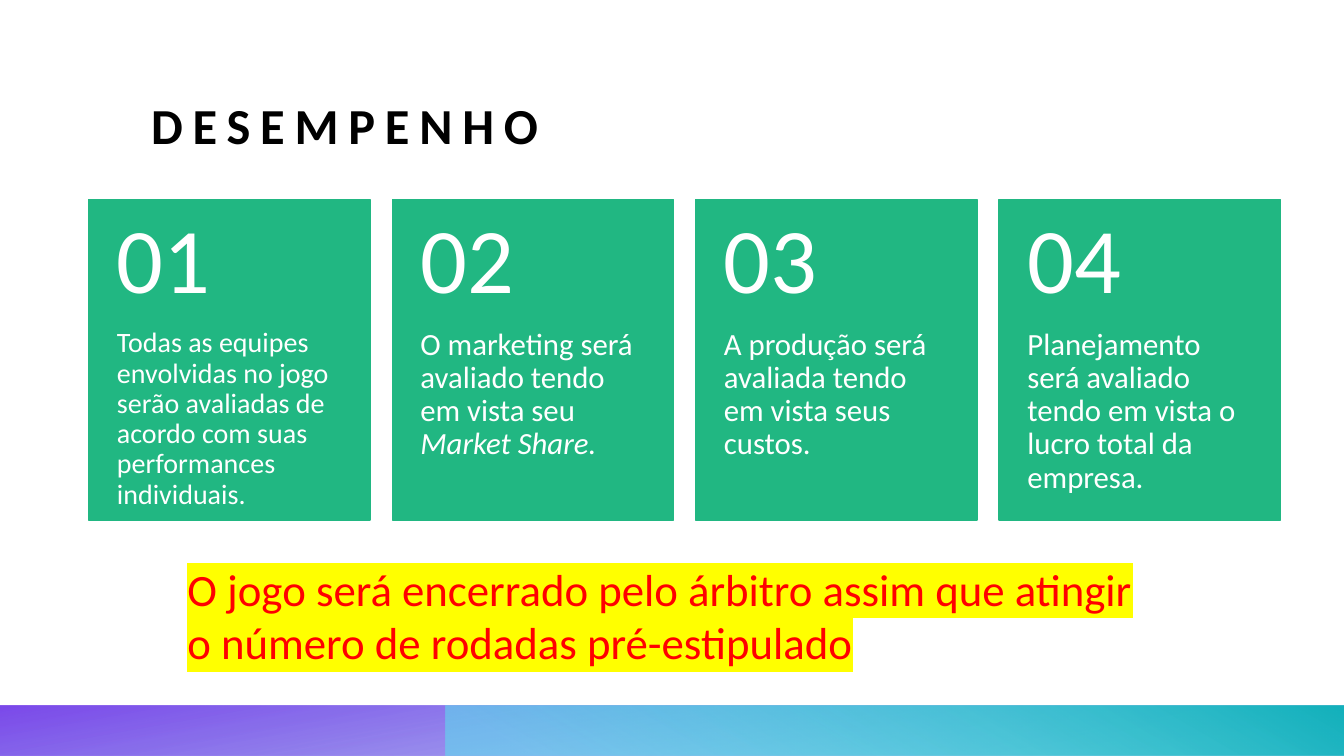
from lxml.etree import SubElement
from pptx import Presentation
from pptx.dml.color import RGBColor
from pptx.enum.shapes import MSO_SHAPE as Shape
from pptx.enum.text import MSO_ANCHOR as Anchor, MSO_AUTO_SIZE as AutoSize, PP_ALIGN as Align
from pptx.oxml.ns import qn
from pptx.util import Inches, Pt

COLORS = {
    "black": "000000", "white": "FFFFFF", "green": "21B782",
    "red": "FF0000", "yellow": "FFFF00",
    "blue": "2E40D9", "purple": "6529E7", "cyan": "5BE4EE", "teal": "14B1BC",
}


def color(name):
    return RGBColor.from_string(COLORS[name])


def write(box, texts, size, ink, margins, anchor=Anchor.TOP, spacing=None):
    """Fill a box with (text, italic) runs in one left-aligned paragraph."""
    frame = box.text_frame
    frame.word_wrap = True
    frame.auto_size = AutoSize.NONE
    frame.vertical_anchor = anchor
    left, top, right, bottom = margins
    frame.margin_left, frame.margin_top = Inches(left), Inches(top)
    frame.margin_right, frame.margin_bottom = Inches(right), Inches(bottom)
    para = frame.paragraphs[0]
    para.alignment = Align.LEFT
    para.line_spacing = spacing
    for text, italic in texts:
        span = para.add_run()
        span.text = text
        span.font.name = "Calibri"
        span.font.size = Pt(size)
        span.font.italic = italic
        span.font.color.rgb = color(ink)
    return para


deck = Presentation()
deck.slide_width, deck.slide_height = Inches(13.33), Inches(7.5)
page = deck.slides.add_slide(deck.slide_layouts[5])

# Footer bars: left, width, rotation, angle, stops of (position, colour, opacity %)
footer_bars = [
    (0, 13.33, 180, 100, [(0.14, "blue", 28), (1, "purple", 85)]),
    (4.42, 8.92, 0, 240, [(0.09, "cyan", 55), (0.99, "teal", 100)]),
]
for left, width, rotation, angle, stops in footer_bars:
    bar = page.shapes.add_shape(Shape.RECTANGLE, Inches(left), Inches(7), Inches(width), Inches(0.5))
    bar.shadow.inherit = False
    bar.line.fill.background()
    bar.rotation = rotation
    bar._element.spPr.find(qn("a:xfrm")).set("flipH", "1")
    bar.fill.gradient()
    bar.fill.gradient_angle = 360 - angle
    for stop, (position, name, opacity) in zip(bar.fill.gradient_stops, stops):
        stop.position = position
        stop.color.rgb = color(name)
    for tint, (position, name, opacity) in zip(bar._element.spPr.iter(qn("a:srgbClr")), stops):
        SubElement(tint, qn("a:alpha")).set("val", str(opacity * 1000))

title = page.shapes.title
title.left, title.top = Inches(1.5), Inches(0.87)
title.width, title.height = Inches(11.2), Inches(0.66)
heading = write(title, [("DESEMPENHO", None)], 36, "black", (0, 0, 0, 0), Anchor.BOTTOM).runs[0]
heading.font.bold = True
heading.font._element.set("spc", "700")

# Numbered cards
CARD_LEFT, CARD_TOP, CARD_STEP = 0.88, 1.98, 3.01
CARD_WIDTH, CARD_HEIGHT, NUMBER_HEIGHT = 2.79, 3.18, 1.27
cards = [
    (20, [("Todas as equipes envolvidas no jogo serão avaliadas de acordo com "
           "suas performances individuais.", None)]),
    (22, [("O marketing será avaliado tendo em vista seu ", None), ("Market Share.", True)]),
    (22, [("A produção será avaliada tendo em vista seus custos.", None)]),
    (22, [("Planejamento será avaliado tendo em vista o lucro total da empresa.", None)]),
]
for index, (size, texts) in enumerate(cards):
    left = Inches(CARD_LEFT + index * CARD_STEP)
    top, width = Inches(CARD_TOP), Inches(CARD_WIDTH)
    group = page.shapes.add_group_shape()
    card = group.shapes.add_shape(Shape.RECTANGLE, left, top, width, Inches(CARD_HEIGHT))
    card.shadow.inherit = False
    card.fill.solid()
    card.fill.fore_color.rgb = color("green")
    card.line.color.rgb = color("green")
    card.line.width = Pt(1)
    body = group.shapes.add_textbox(left, Inches(CARD_TOP + NUMBER_HEIGHT + 0.01), width, Inches(1.91))
    write(body, texts, size, "white", (0.28, 0, 0.28, 0.36), spacing=0.9)
    number = group.shapes.add_textbox(left, top, width, Inches(NUMBER_HEIGHT))
    write(number, [(f"{index + 1:02}", None)], 66, "white", (0.28, 0.18, 0.28, 0.18), Anchor.MIDDLE, 0.9)

# Highlighted closing rule
notice = page.shapes.add_textbox(Inches(1.76), Inches(5.52), Inches(9.68), Inches(1.18))
rule = write(notice, [("O jogo será encerrado pelo árbitro assim que atingir o número de "
                       "rodadas pré-estipulado", None)], 32, "red", (0.1, 0.05, 0.1, 0.05))
notice.text_frame.auto_size = AutoSize.SHAPE_TO_FIT_TEXT
properties = rule.runs[0].font._element
highlight = SubElement(properties, qn("a:highlight"))
SubElement(highlight, qn("a:srgbClr")).set("val", COLORS["yellow"])
properties.find(qn("a:solidFill")).addnext(highlight)

deck.save("out.pptx")
